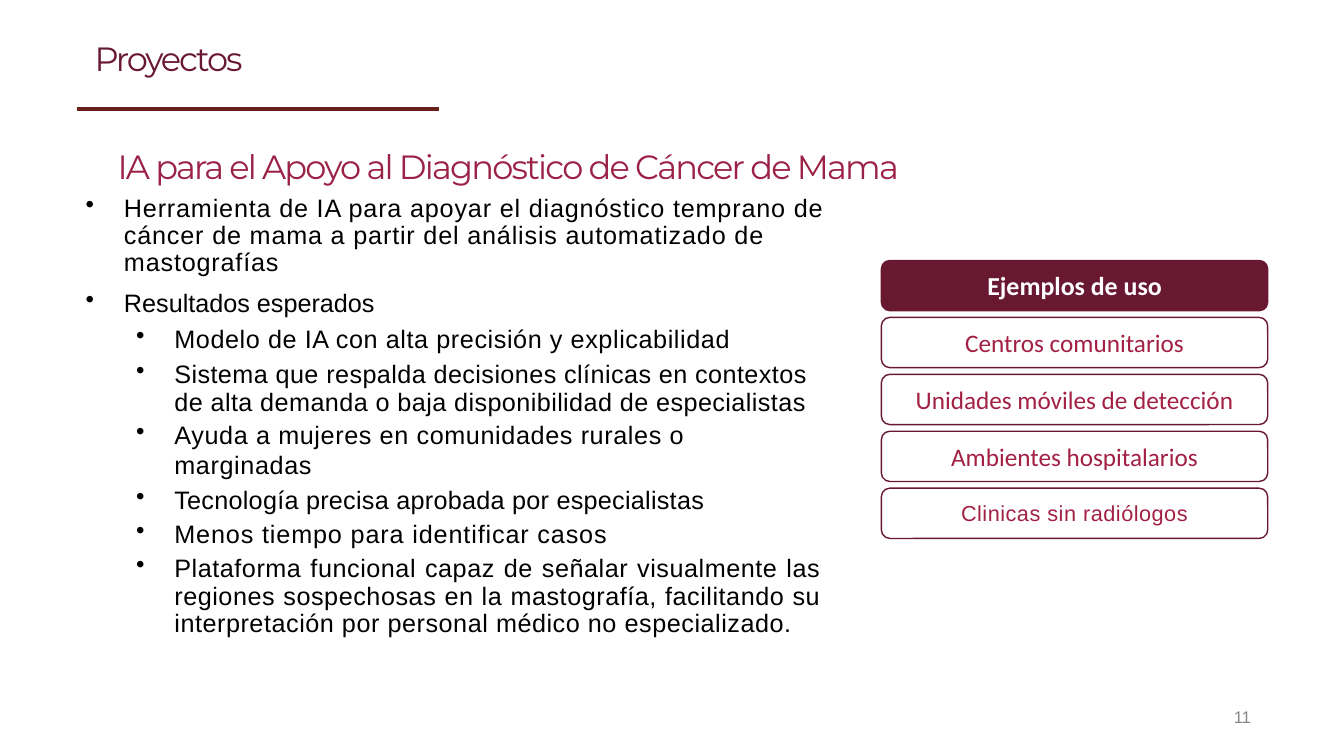
"""Builds the project slide on AI support for breast cancer diagnosis."""
from pptx import Presentation
from pptx.dml.color import RGBColor
from pptx.enum.shapes import MSO_CONNECTOR, MSO_SHAPE
from pptx.enum.text import MSO_ANCHOR, PP_ALIGN
from pptx.oxml.ns import qn
from pptx.util import Inches, Pt

WINE = RGBColor(0x69, 0x18, 0x31)
RULE_RED = RGBColor(0x69, 0x1F, 0x1D)
RASPBERRY = RGBColor(0x9B, 0x21, 0x46)
LABEL_RED = RGBColor(0xA3, 0x20, 0x45)
BLACK = RGBColor(0, 0, 0)
WHITE = RGBColor(0xFF, 0xFF, 0xFF)
GRAY = RGBColor(0x87, 0x87, 0x87)
STRAIGHT = MSO_CONNECTOR.STRAIGHT
ROUNDED = MSO_SHAPE.ROUNDED_RECTANGLE
TEXT_TOP, TEXT_MIDDLE = MSO_ANCHOR.TOP, MSO_ANCHOR.MIDDLE
LEFT, CENTER, JUSTIFY = PP_ALIGN.LEFT, PP_ALIGN.CENTER, PP_ALIGN.JUSTIFY

deck = Presentation()
deck.slide_width, deck.slide_height = Inches(13.333), Inches(7.5)
COLUMN, ROW = deck.slide_width / 100, deck.slide_height / 100
page = deck.slides.add_slide(deck.slide_layouts[6])


def place(left, top, width, height):
    """Turn percentages of the slide into lengths."""
    return int(left * COLUMN), int(top * ROW), int(width * COLUMN), int(height * ROW)


def write(shape, texts, font, size, color, spacing=0, align=LEFT, anchor=TEXT_TOP):
    """Fill a shape with paragraphs of one style and return its paragraphs."""
    frame = shape.text_frame
    frame.text = "\n".join(texts)
    frame.word_wrap = True
    frame.vertical_anchor = anchor
    frame.margin_left = frame.margin_right = frame.margin_top = frame.margin_bottom = 0
    for para in frame.paragraphs:
        para.alignment = align
        for span in para.runs:
            span.font.name, span.font.size = font, Pt(size)
            span.font.color.rgb = color
            span.font._element.set("spc", str(round(spacing * 100)))
    return frame.paragraphs


HEADINGS = [
    ("Proyectos", (7.05, 5.07, 34, 5.7), "Montserrat", 24, WINE, -1.5),
    ("IA para el Apoyo al Diagnóstico de Cáncer de Mama",
     (8.75, 19.33, 66, 5.7), "Montserrat", 24, RASPBERRY, -1.28),
    ("11", (91.8, 93.5, 2, 2.8), "Arial", 12, GRAY, -0.2),
]
for text, area, font, size, color, spacing in HEADINGS:
    write(page.shapes.add_textbox(*place(*area)), [text], font, size, color, spacing)

left, top, width, _ = place(5.7, 14.4, 26.95, 0)
rule = page.shapes.add_connector(STRAIGHT, left, top, left + width, top)
rule.line.color.rgb = RULE_RED
rule.line.width = Pt(3)
rule._element.spPr.add_effectLst() if hasattr(rule._element.spPr, "add_effectLst") else \
    rule._element.spPr.append(rule._element.spPr.makeelement(qn("a:effectLst"), {}))

# level, letter spacing, space before, exact line height, right indent, text
BULLETS = [
    (0, 0.6, 0, 19.5, 0, "Herramienta de IA para apoyar el diagnóstico temprano de cáncer de mama "
     "a partir del análisis automatizado de mastografías"),
    (0, 0, 7.5, None, 0, "Resultados esperados"),
    (1, 0.42, 4.2, None, 0, "Modelo de IA con alta precisión y explicabilidad"),
    (1, 0.3, 5.6, 19.5, 0.18, "Sistema que respalda decisiones clínicas en contextos de alta demanda "
     "o baja disponibilidad de especialistas"),
    (1, 0.45, 2.1, None, 0.7, "Ayuda a mujeres en comunidades rurales o marginadas"),
    (1, 0.2, 3.1, None, 0, "Tecnología precisa aprobada por especialistas"),
    (1, 0.63, 3.2, None, 0, "Menos tiempo para identificar casos"),
    (1, 0.4, 4.8, 19.5, 0.15, "Plataforma funcional capaz de señalar visualmente las regiones "
     "sospechosas en la mastografía, facilitando su interpretación por personal médico no especializado."),
]
body = page.shapes.add_textbox(*place(6.3, 25.8, 55.95, 60))
paragraphs = write(body, [bullet[-1] for bullet in BULLETS], "Arial", 18, BLACK)
for para, (level, spacing, before, height, right, _) in zip(paragraphs, BULLETS):
    properties = para._p.get_or_add_pPr()
    properties.set("marL", str(Inches(0.39 + 0.5 * level)))
    properties.set("marR", str(Inches(right)))
    properties.set("indent", str(Inches(-0.38)))
    properties.append(properties.makeelement(qn("a:buChar"), {"char": "•"}))
    para.level = level
    para.space_before = Pt(before)
    if height:
        para.line_spacing = Pt(height)
    para.runs[0].font._element.set("spc", str(round(spacing * 100)))
paragraphs[-1].alignment = JUSTIFY

USES = [
    ("Ejemplos de uso", "Calibri", 18.5, WHITE, WINE, 0),
    ("Centros comunitarios", "Calibri", 18, LABEL_RED, WHITE, 0),
    ("Unidades móviles de detección", "Calibri", 18, LABEL_RED, WHITE, 0),
    ("Ambientes hospitalarios", "Calibri", 18, LABEL_RED, WHITE, 0),
    ("Clinicas sin radiólogos", "Arial", 15.5, LABEL_RED, WHITE, 0.37),
]
for index, (text, font, size, color, fill, spacing) in enumerate(USES):
    use = page.shapes.add_shape(ROUNDED, *place(65.58, 34.45 + 7.53 * index, 28.75, 6.65))
    use.adjustments[0] = 0.17
    use.shadow.inherit = False
    use.fill.solid()
    use.fill.fore_color.rgb = fill
    use.line.color.rgb = WINE
    use.line.width = Pt(1)
    label = write(use, [text], font, size, color, spacing, CENTER, TEXT_MIDDLE)[0]
    label.runs[0].font.bold = index == 0

deck.save("out.pptx")
